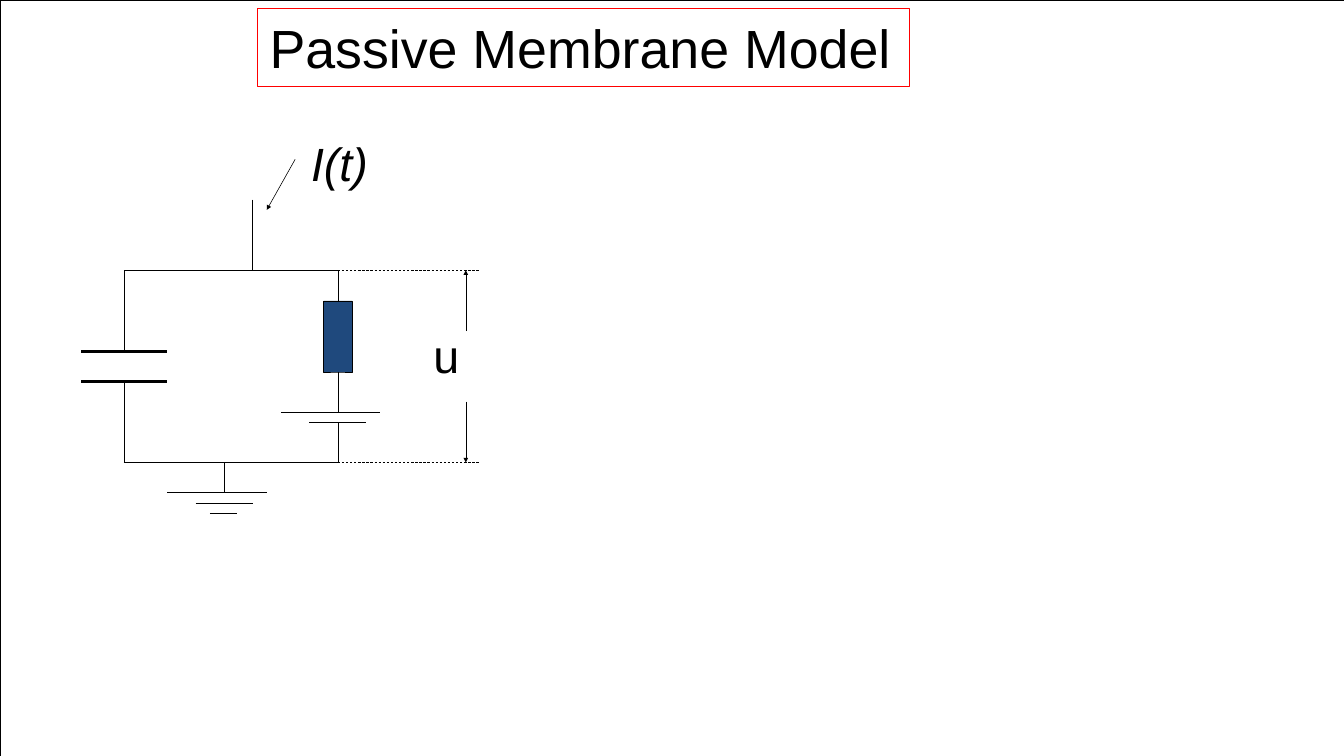
import lxml.etree
import pptx
import pptx.dml.color
import pptx.enum.dml
import pptx.enum.shapes
import pptx.enum.text
import pptx.oxml.ns
import pptx.util

PX = 9144  # 100 px to the inch
SLIDE_W, SLIDE_H = 2363, 1329
BLACK, RED, NAVY = "000000", "FF0000", "1F497D"
TOP, BOTTOM = 0, 2  # connection sites of a rectangle


def px(*lengths):
    return [pptx.util.Emu(length * PX) for length in lengths]


def color(hex_string):
    return pptx.dml.color.RGBColor.from_string(hex_string)


def box(shapes, rect, line=BLACK, fill=None):
    shape = shapes.add_shape(pptx.enum.shapes.MSO_SHAPE.RECTANGLE, *px(*rect))
    shape.shadow.inherit = False
    if fill:
        shape.fill.solid()
        shape.fill.fore_color.rgb = color(fill)
    else:
        shape.fill.background()
    shape.line.color.rgb = color(line)
    shape.line.width = pptx.util.Pt(0.75)
    return shape


def write(shape, text, size, italic=False):
    frame = shape.text_frame
    frame.word_wrap = False
    frame.auto_size = pptx.enum.text.MSO_AUTO_SIZE.SHAPE_TO_FIT_TEXT
    frame.vertical_anchor = pptx.enum.text.MSO_ANCHOR.TOP
    frame.text = text
    paragraph = frame.paragraphs[0]
    paragraph.alignment = pptx.enum.text.PP_ALIGN.LEFT
    font = paragraph.runs[0].font
    font.name, font.size, font.italic = "Arial", pptx.util.Pt(size), italic
    font.color.rgb = color(BLACK)
    return frame


def wire(shapes, start, end, width=0.75, dashed=False, arrow=False):
    connector = shapes.add_connector(
        pptx.enum.shapes.MSO_CONNECTOR.STRAIGHT, *px(*start, *end))
    connector.line.color.rgb = color(BLACK)
    connector.line.width = pptx.util.Pt(width)
    if dashed:
        connector.line.dash_style = pptx.enum.dml.MSO_LINE.DASH
    qn = pptx.oxml.ns.qn
    if arrow:
        line_xml = connector.line._get_or_add_ln()
        lxml.etree.SubElement(line_xml, qn("a:tailEnd"), type="triangle")
    lxml.etree.SubElement(connector._element.spPr, qn("a:effectLst"))
    return connector


def title(shapes, left, top, width, height):
    heading = box(shapes, (left, top, width, height), RED)
    frame = write(heading, "Passive Membrane Model", 68)
    frame.margin_left = frame.margin_right = px(21)[0]
    frame.margin_top = frame.margin_bottom = px(11)[0]


def circuit(shapes, left, top):
    def at(x, y):
        return left + x, top + y

    def label(x, y, width, height, text, italic=False):
        textbox = shapes.add_textbox(*px(*at(x, y), width, height))
        write(textbox, text, 59, italic)

    def across(y, x1, x2, **style):
        return wire(shapes, at(x1, y), at(x2, y), **style)

    def down(x, y1, y2, **style):
        return wire(shapes, at(x, y1), at(x, y2), **style)

    rail_top, rail_bottom = 243, 581
    capacitor_x, resistor_x, ground_x, voltage_x = 75, 451, 251, 676

    # Input current
    wire(shapes, at(376, 48), at(326, 137), arrow=True)
    label(394, 0, 126, 109, "I(t)", italic=True)
    down(301, 119, rail_top)

    # Rails, and their dashed extensions to the voltage arrows
    for rail in (rail_top, rail_bottom):
        across(rail, capacitor_x, resistor_x)
        across(rail, resistor_x, 701, dashed=True)

    # Capacitor
    for plate, rail in ((386, rail_top), (439, rail_bottom)):
        across(plate, 0, 151, width=4.5)
        down(capacitor_x, plate, rail)

    # Resistor and battery
    resistor = box(shapes, (*at(resistor_x - 25, 297), 50, 125), fill=NAVY)
    down(resistor_x, rail_top, 297).end_connect(resistor, TOP)
    down(resistor_x, 422, 492).begin_connect(resistor, BOTTOM)
    across(492, 351, 526)
    across(510, 401, 501)
    down(resistor_x, 510, rail_bottom)

    # Ground
    down(ground_x, rail_bottom, 634)
    for step, (x1, x2) in enumerate(((151, 326), (201, 301), (226, 273))):
        across(634 + 18 * step, x1, x2)

    # Membrane voltage
    down(voltage_x, rail_top + 107, rail_top, arrow=True)
    down(voltage_x, rail_bottom - 107, rail_bottom, arrow=True)
    label(609, 337, 66, 109, "u")


def main():
    deck = pptx.Presentation()
    deck.slide_width, deck.slide_height = px(SLIDE_W, SLIDE_H)
    slide = deck.slides.add_slide(deck.slide_layouts[6])
    box(slide.shapes, (0, 0, SLIDE_W, SLIDE_H))
    title(slide.shapes, 453, 15, 1146, 136)
    circuit(slide.shapes.add_group_shape().shapes, 143, 232)
    deck.save("out.pptx")


if __name__ == "__main__":
    main()
